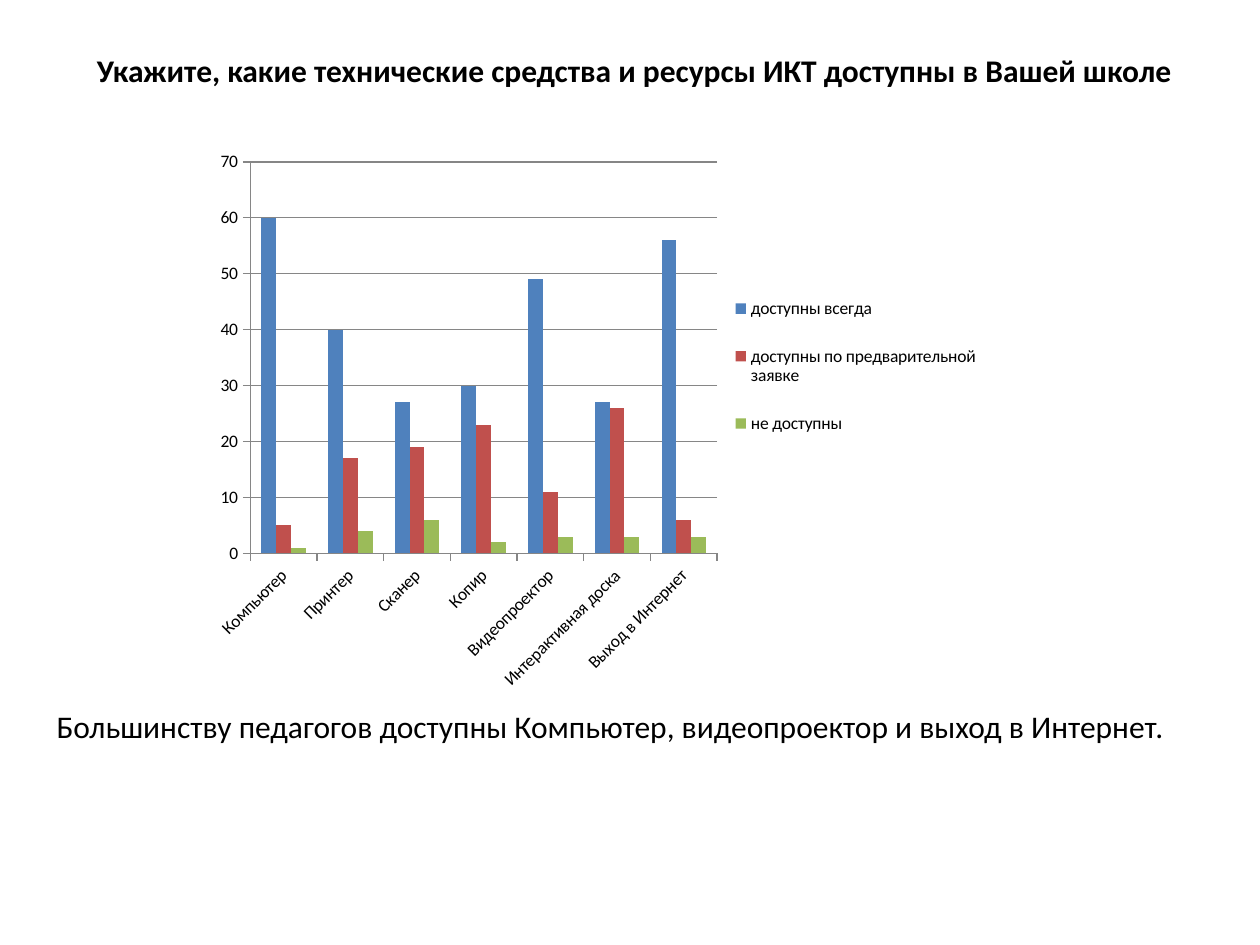
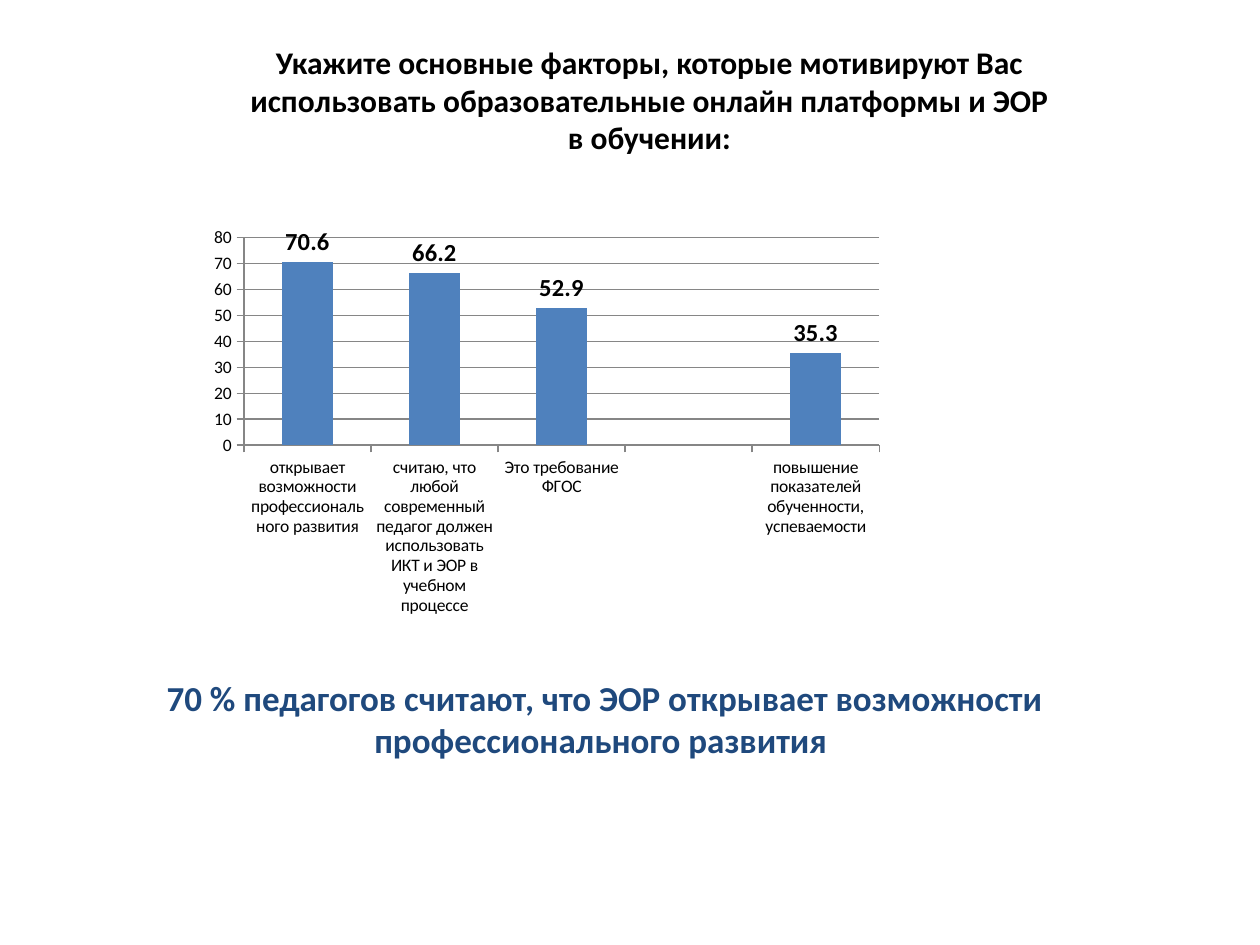
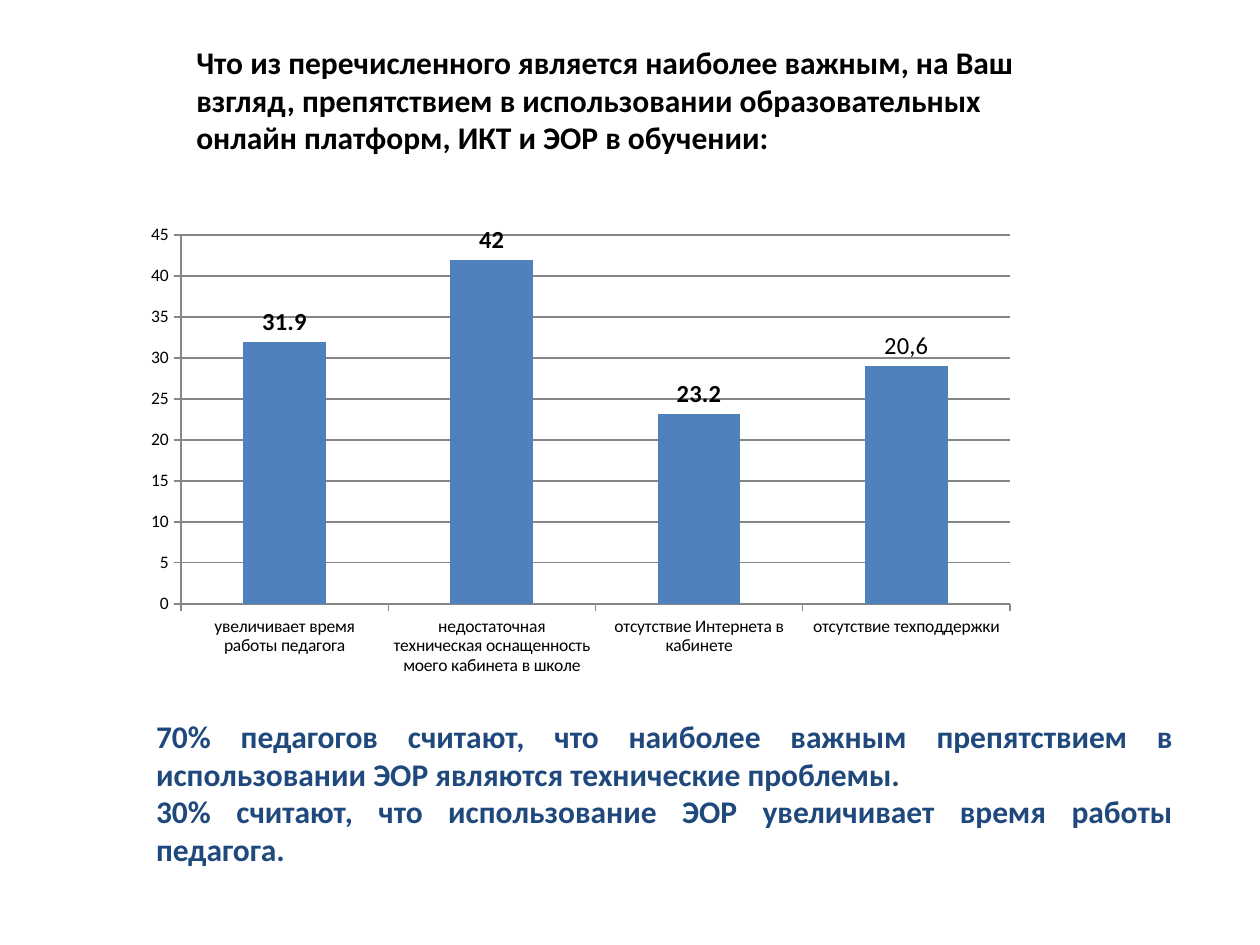
import pptx
import pptx.chart.data
import pptx.dml.color
import pptx.enum.chart
import pptx.enum.text
import pptx.oxml
import pptx.oxml.ns
import pptx.util
from dataclasses import dataclass

Inches = pptx.util.Inches
Pt = pptx.util.Pt
qn = pptx.oxml.ns.qn
Align = pptx.enum.text.PP_ALIGN


@dataclass(frozen=True)
class Theme:
    font: str = "Calibri"
    black: str = "000000"
    navy: str = "1F497D"
    axis: str = "868686"
    series: tuple = ("4F81BD", "C0504D", "9BBB59")
    heading_size: int = 18
    accent_size: int = 20
    label_size: int = 14
    chart_size: int = 10


THEME = Theme()

SLIDES = [
    {
        "title": {
            "at": (0.67, 0.36, 8.87, 0.4), "bold": True, "wrap": False,
            "paragraphs": ["Укажите, какие технические средства и ресурсы ИКТ доступны в Вашей школе"],
        },
        "chart": {
            "at": (1.61, 1.13, 6.28, 4.44),
            "plot": (0.06, 0.035, 0.59, 0.7),
            "legend": (0.66, 0.23, 0.33, 0.34),
            "scale": (70, 10),
            "rotation": -45,
            "categories": ["Компьютер", "Принтер", "Сканер", "Копир", "Видеопроектор",
                           "Интерактивная доска", "Выход в Интернет"],
            "series": [
                ("доступны всегда", (60, 40, 27, 30, 49, 27, 56)),
                ("доступны по предварительной заявке", (5, 17, 19, 23, 11, 26, 6)),
                ("не доступны", (1, 4, 6, 2, 3, 3, 3)),
            ],
        },
        "conclusion": {
            "at": (0.35, 5.56, 9.09, 0.4), "wrap": False,
            "paragraphs": ["Большинству педагогов доступны Компьютер, видеопроектор и выход в Интернет."],
        },
    },
    {
        "title": {
            "at": (1.85, 0.29, 6.61, 1.01), "bold": True, "align": Align.CENTER,
            "paragraphs": ["Укажите основные факторы, которые мотивируют Вас использовать "
                           "образовательные онлайн платформы и ЭОР в обучении:"],
        },
        "chart": {
            "at": (1.51, 1.55, 7.35, 3.39),
            "plot": (0.058, 0.099, 0.686, 0.486),
            "scale": (80, 10),
            "categories": [
                "открывает возможности профессионального развития",
                "считаю, что любой современный педагог должен использовать ИКТ и ЭОР в учебном процессе",
                "Это требование ФГОС",
                "",
                "повышение показателей обученности, успеваемости",
            ],
            "series": [("Series 1", (70.6, 66.2, 52.9, None, 35.3))],
        },
        "conclusion": {
            "at": (1.18, 5.32, 7.24, 0.77), "bold": True, "align": Align.CENTER,
            "color": THEME.navy, "size": THEME.accent_size,
            "paragraphs": ["70 % педагогов считают, что ЭОР открывает возможности профессионального развития "],
        },
    },
    {
        "title": {
            "at": (1.46, 0.29, 7.17, 1.31), "bold": True,
            "paragraphs": ["Что из перечисленного является наиболее важным, на Ваш взгляд, препятствием "
                           "в использовании образовательных онлайн платформ, ИКТ и ЭОР в обучении:"],
        },
        "chart": {
            "at": (0.98, 1.39, 7.87, 4.8),
            "plot": (0.058, 0.099, 0.836, 0.61),
            "scale": (45, 5),
            "categories": [
                "увеличивает время работы педагога",
                "недостаточная техническая оснащенность моего кабинета в школе",
                "отсутствие Интернета в кабинете",
                "отсутствие техподдержки",
            ],
            "series": [("Series 1", (31.9, 42, 23.2, 29))],
            "point_labels": {3: "20,6"},
        },
        "conclusion": {
            "at": (1.14, 5.64, 8.27, 1.62), "bold": True, "align": Align.JUSTIFY,
            "color": THEME.navy,
            "paragraphs": [
                "70% педагогов считают, что наиболее важным препятствием в использовании ЭОР "
                "являются технические проблемы.",
                "30% считают, что использование ЭОР увеличивает время работы педагога.",
            ],
        },
    },
]


def style_font(font, size, color=THEME.black, bold=False):
    font.name = THEME.font
    font.size = Pt(size)
    font.bold = bold
    font.color.rgb = pptx.dml.color.RGBColor.from_string(color)


def add_text(slide, content):
    box = slide.shapes.add_textbox(*map(Inches, content["at"]))
    frame = box.text_frame
    frame.word_wrap = content.get("wrap", True)
    for index, text in enumerate(content["paragraphs"]):
        paragraph = frame.add_paragraph() if index else frame.paragraphs[0]
        paragraph.alignment = content.get("align", Align.LEFT)
        run = paragraph.add_run()
        run.text = text
        style_font(run.font, content.get("size", THEME.heading_size),
                   content.get("color", THEME.black), content.get("bold", False))


def make_layout(fractions, inner=False):
    layout = pptx.oxml.parse_xml(
        '<c:layout xmlns:c="http://schemas.openxmlformats.org/drawingml/2006/chart"><c:manualLayout/></c:layout>')
    settings = [("layoutTarget", "inner")] if inner else []
    settings += [("xMode", "edge"), ("yMode", "edge"), *zip("xywh", fractions)]
    for name, value in settings:
        layout[0].append(layout[0].makeelement(qn(f"c:{name}"), {"val": str(value)}))
    return layout


def remove_layout(element):
    for layout in element.findall(qn("c:layout")):
        element.remove(layout)


def style_line(line):
    line.width = Pt(0.75)
    line.color.rgb = pptx.dml.color.RGBColor.from_string(THEME.axis)


def add_legend(chart, fractions):
    chart.has_legend = True
    legend = chart.legend
    legend.position = pptx.enum.chart.XL_LEGEND_POSITION.RIGHT
    legend.include_in_layout = False
    style_font(legend.font, THEME.chart_size)
    element = legend._element
    remove_layout(element)
    element.find(qn("c:overlay")).addprevious(make_layout(fractions))


def add_value_labels(series, point_labels):
    outside = pptx.enum.chart.XL_LABEL_POSITION.OUTSIDE_END
    labels = series.data_labels
    labels.show_value = True
    labels.position = outside
    style_font(labels.font, THEME.label_size, bold=True)
    for index, text in point_labels.items():
        label = series.points[index].data_label
        run = label.text_frame.paragraphs[0].add_run()
        run.text = text
        style_font(run.font, THEME.label_size)
        label.position = outside


def add_column_chart(slide, content):
    data = pptx.chart.data.CategoryChartData()
    data.categories = content["categories"]
    for name, values in content["series"]:
        data.add_series(name, values)
    chart = slide.shapes.add_chart(pptx.enum.chart.XL_CHART_TYPE.COLUMN_CLUSTERED,
                                   *map(Inches, content["at"]), data).chart
    chart.has_title = False
    style_font(chart.font, THEME.chart_size)

    value_axis, category_axis = chart.value_axis, chart.category_axis
    value_axis.minimum_scale = 0
    value_axis.maximum_scale, value_axis.major_unit = content["scale"]
    value_axis.has_major_gridlines = True
    style_line(value_axis.major_gridlines.format.line)
    for axis in (value_axis, category_axis):
        axis.major_tick_mark = pptx.enum.chart.XL_TICK_MARK.OUTSIDE
        style_line(axis.format.line)
        style_font(axis.tick_labels.font, THEME.chart_size)
    if "rotation" in content:
        body = category_axis._element.find(qn("c:txPr")).find(qn("a:bodyPr"))
        body.set("rot", str(content["rotation"] * 60000))

    plot = chart.plots[0]
    plot.gap_width = 150
    plot.vary_by_categories = False
    for series, color in zip(plot.series, THEME.series):
        series.format.fill.solid()
        series.format.fill.fore_color.rgb = pptx.dml.color.RGBColor.from_string(color)
    plot_area = chart._chartSpace.chart.plotArea
    remove_layout(plot_area)
    plot_area.insert(0, make_layout(content["plot"], inner=True))

    if "legend" in content:
        add_legend(chart, content["legend"])
    else:
        chart.has_legend = False
        add_value_labels(plot.series[0], content.get("point_labels", {}))


def main():
    presentation = pptx.Presentation()
    presentation.slide_width = Inches(10)
    presentation.slide_height = Inches(7.5)
    for content in SLIDES:
        slide = presentation.slides.add_slide(presentation.slide_layouts[6])
        add_text(slide, content["title"])
        add_column_chart(slide, content["chart"])
        add_text(slide, content["conclusion"])
    presentation.save("out.pptx")


if __name__ == "__main__":
    main()
